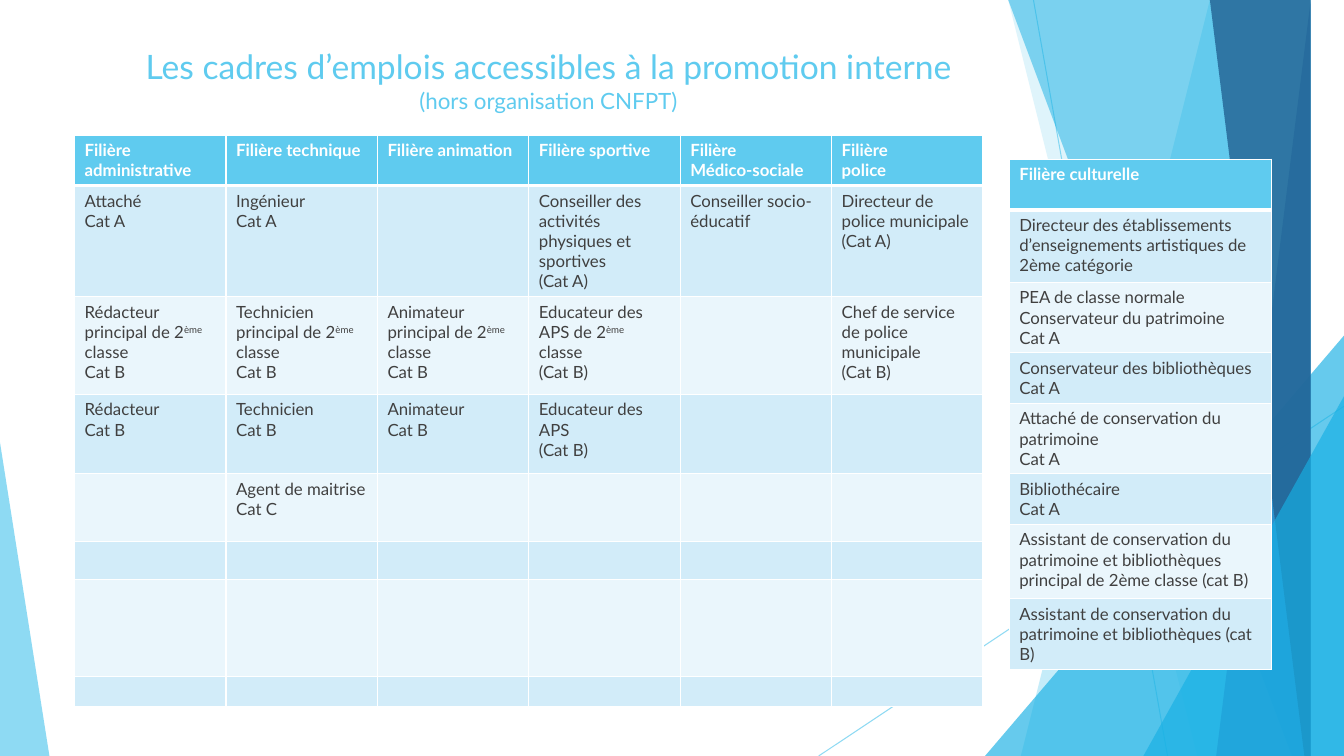
from dataclasses import dataclass

from lxml import etree
from pptx import Presentation
from pptx import util as u
from pptx.dml.color import RGBColor
from pptx.enum import shapes, text
from pptx.oxml import ns

SKY = RGBColor(0x5F, 0xCB, 0xEF)
CYAN = RGBColor(0x17, 0xB0, 0xE4)
BLUE = RGBColor(0x2E, 0x83, 0xC3)
NAVY = RGBColor(0x22, 0x62, 0x92)
WHITE = RGBColor(0xFF, 0xFF, 0xFF)
INK = RGBColor(0x40, 0x40, 0x40)
BANDS = [RGBColor(0xD2, 0xEC, 0xF9), RGBColor(0xEA, 0xF6, 0xFC)]
FONT = "Lato"
WIDTH, HEIGHT = 13.33, 7.5
RAISED = "ème"

CAREERS = [
    ["Filière administrative", "Filière technique", "Filière animation",
     "Filière sportive", "Filière\nMédico-sociale", "Filière\npolice"],
    ["Attaché\nCat A", "Ingénieur\nCat A", "",
     "Conseiller des activités physiques et sportives\n(Cat A)",
     "Conseiller socio-éducatif", "Directeur de police municipale\n(Cat A)"],
    ["Rédacteur principal de 2^ème classe\nCat B",
     "Technicien principal de 2^ème classe\nCat B",
     "Animateur principal de 2^ème classe\nCat B",
     "Educateur des APS de 2^ème classe\n(Cat B)", "",
     "Chef de service de police municipale\n(Cat B)"],
    ["Rédacteur\nCat B", "Technicien\nCat B", "Animateur\nCat B",
     "Educateur des APS\n(Cat B)", "", ""],
    ["", "Agent de maitrise\nCat C", "", "", "", ""],
    [""] * 6,
    [""] * 6,
    [""] * 6,
]
CAREER_ROWS = [0.49, 1.1, 0.97, 0.79, 0.67, 0.38, 0.96, 0.3]

CULTURE = [[entry] for entry in (
    "Filière culturelle",
    "Directeur des établissements d’enseignements artistiques de 2ème catégorie",
    "PEA de classe normale\nConservateur du patrimoine\nCat A",
    "Conservateur des bibliothèques\nCat A",
    "Attaché de conservation du patrimoine\nCat A",
    "Bibliothécaire\nCat A",
    "Assistant de conservation du patrimoine et bibliothèques principal de 2ème classe (cat B)",
    "Assistant de conservation du patrimoine et bibliothèques (cat B)",
)]
CULTURE_ROWS = [0.5, 0.72, 0.7, 0.5, 0.7, 0.5, 0.74, 0.7]


@dataclass
class Box:
    left: float
    top: float
    width: float
    height: float

    def lengths(self):
        return [u.Inches(n) for n in (self.left, self.top, self.width, self.height)]


def set_opacity(fill_parent, percent):
    color = fill_parent.find(".//" + ns.qn("a:srgbClr"))
    etree.SubElement(color, ns.qn("a:alpha")).set("val", str(percent * 1000))


def paint(shape, color, percent):
    shape.shadow.inherit = False
    shape.fill.solid()
    shape.fill.fore_color.rgb = color
    shape.line.fill.background()
    set_opacity(shape._element.spPr, percent)


def add_line(page, start, end):
    line = page.shapes.add_connector(
        shapes.MSO_CONNECTOR.STRAIGHT, *[u.Inches(n) for n in (*start, *end)])
    line.line.color.rgb = SKY
    line.line.width = u.Pt(0.75)
    properties = line._element.spPr
    set_opacity(properties, 70)
    etree.SubElement(properties, ns.qn("a:effectLst"))


def add_facet(page, box, top_x, bottom_x, color, percent):
    right, bottom = box.left + box.width, box.top + box.height
    builder = page.shapes.build_freeform(top_x, box.top, scale=u.Inches(1))
    builder.add_line_segments([(right, box.top), (right, bottom), (bottom_x, bottom)])
    paint(builder.convert_to_shape(), color, percent)


def add_triangle(page, box, apex, color, percent):
    triangle = page.shapes.add_shape(
        shapes.MSO_SHAPE.ISOSCELES_TRIANGLE, *box.lengths())
    triangle.adjustments[0] = apex
    paint(triangle, color, percent)


def add_backdrop(page, box):
    right, bottom = box.left + box.width, box.top + box.height

    def corner(width, height):
        return Box(right - width, bottom - height, width, height)

    add_line(page, (10.25, box.top), (11.58, bottom))
    add_line(page, (right, 4.03), (8.12, bottom))
    add_facet(page, box, 12.28, 10.04, SKY, 36)
    add_facet(page, box, 10.5, 11.83, SKY, 20)
    add_triangle(page, corner(3.56, 4.17), 1, CYAN, 66)
    add_facet(page, box, 10.21, 12.91, CYAN, 50)
    add_facet(page, box, 13.03, 11.92, BLUE, 70)
    add_facet(page, box, 11.96, 13.18, NAVY, 80)
    add_triangle(page, corner(1.99, 3.57), 1, CYAN, 66)
    add_triangle(page, Box(box.left, bottom - 3.11, 0.49, 3.11), 0, SKY, 70)


def add_title(page, box):
    title = page.shapes.title
    title.left, title.top, title.width, title.height = box.lengths()
    page.shapes._spTree.append(title._element)
    frame = title.text_frame
    frame.word_wrap = True
    frame.auto_size = text.MSO_AUTO_SIZE.NONE
    frame.vertical_anchor = text.MSO_ANCHOR.TOP
    para = frame.paragraphs[0]
    para.alignment = text.PP_ALIGN.CENTER
    para.font.name = FONT
    para.font.color.rgb = SKY
    heading = para.add_run()
    heading.text = "Les cadres d’emplois accessibles à la promotion interne"
    heading.font.size = u.Pt(24)
    para.add_line_break()
    remark = para.add_run()
    remark.text = "(hors organisation CNFPT)"
    remark.font.size = u.Pt(16)


def set_borders(cell, bottom_width):
    properties = cell._tc.get_or_add_tcPr()
    for side, width in (("L", 1), ("R", 1), ("T", 1), ("B", bottom_width)):
        border = etree.SubElement(properties, ns.qn("a:ln" + side), w=str(u.Pt(width)))
        fill = etree.SubElement(border, ns.qn("a:solidFill"))
        etree.SubElement(fill, ns.qn("a:srgbClr"), val=str(WHITE))


def write_cell(cell, content, is_header):
    frame = cell.text_frame
    for index, line in enumerate(content.split("\n")):
        para = frame.add_paragraph() if index else frame.paragraphs[0]
        para.font.name = FONT
        para.font.size = u.Pt(12)
        para.font.bold = is_header
        para.font.color.rgb = WHITE if is_header else INK
        before, mark, after = line.partition("^" + RAISED)
        for part in filter(None, (before, mark, after)):
            span = para.add_run()
            span.text = part.lstrip("^")
            if part == mark:
                span._r.get_or_add_rPr().set("baseline", "30000")
        if not line:
            etree.SubElement(para._p, ns.qn("a:endParaRPr"), sz="1200")


def add_grid(page, box, entries, row_heights):
    columns = len(entries[0])
    table = page.shapes.add_table(len(entries), columns, *box.lengths()).table
    for column in table.columns:
        column.width = u.Inches(box.width / columns)
    for index, (height, row) in enumerate(zip(row_heights, entries)):
        table.rows[index].height = u.Inches(height)
        is_header = index == 0
        for cell, content in zip(table.rows[index].cells, row):
            set_borders(cell, 3 if is_header else 1)
            cell.fill.solid()
            cell.fill.fore_color.rgb = SKY if is_header else BANDS[(index - 1) % 2]
            write_cell(cell, content, is_header)


def main():
    deck = Presentation()
    deck.slide_width, deck.slide_height = u.Inches(WIDTH), u.Inches(HEIGHT)
    page = deck.slides.add_slide(deck.slide_layouts.get_by_name("Title Only"))
    add_backdrop(page, Box(0, 0, WIDTH, HEIGHT))
    add_title(page, Box(0.74, 0.41, 9.4, 1.08))
    add_grid(page, Box(0.74, 1.34, 9.01, sum(CAREER_ROWS)), CAREERS, CAREER_ROWS)
    add_grid(page, Box(10.01, 1.58, 2.6, sum(CULTURE_ROWS)), CULTURE, CULTURE_ROWS)
    deck.save("out.pptx")


if __name__ == "__main__":
    main()
